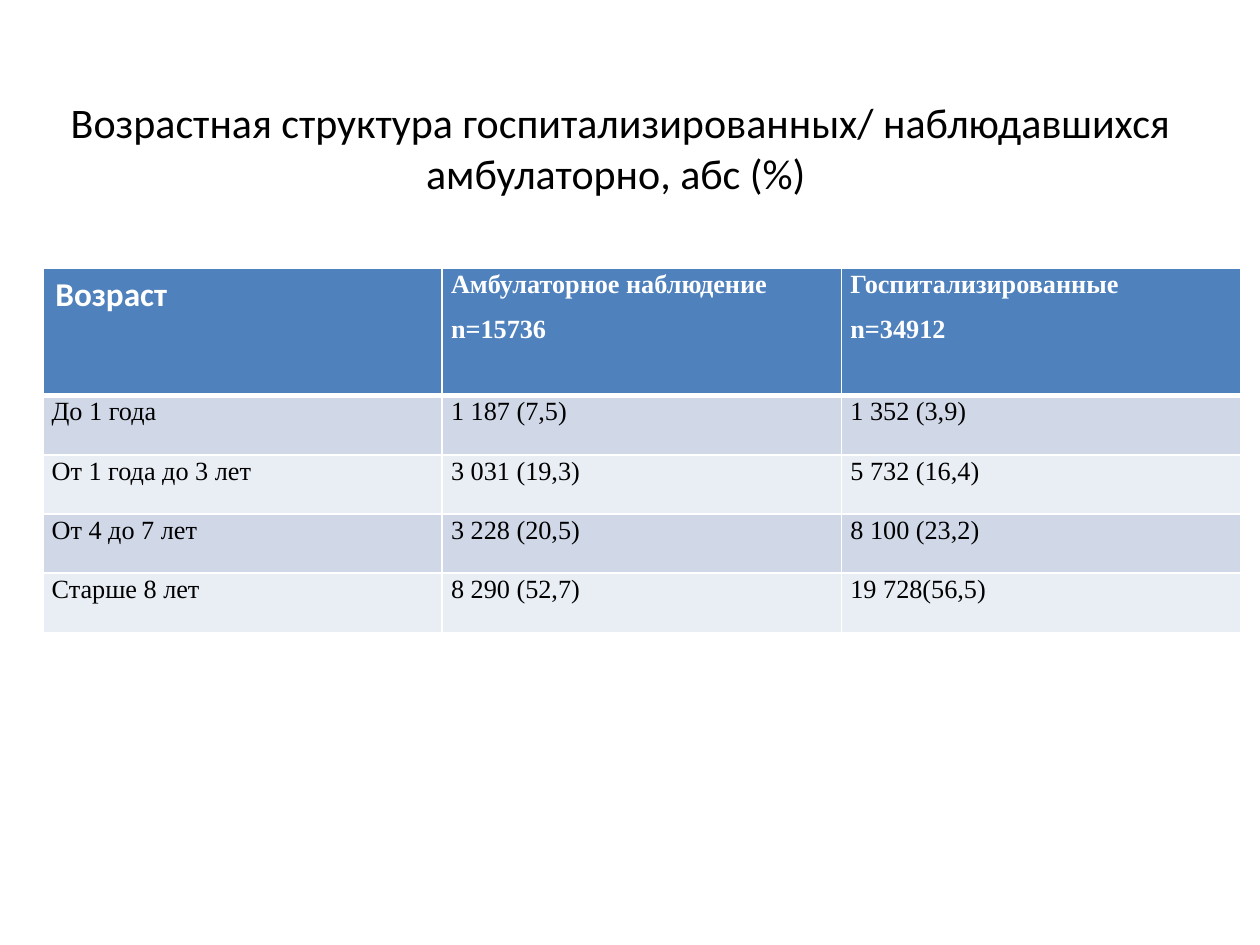
from dataclasses import dataclass

from lxml.etree import SubElement
from pptx import Presentation
from pptx.dml.color import RGBColor as RGB
from pptx.enum.text import MSO_ANCHOR as ANCHOR, PP_ALIGN as ALIGN
from pptx.oxml.ns import qn
from pptx.util import Inches, Pt


@dataclass(frozen=True)
class Theme:
    ink: str = "000000"
    white: str = "FFFFFF"
    header: str = "4F81BD"
    bands: tuple = ("D0D8E8", "E9EDF4")
    heading_font: str = "Calibri"
    body_font: str = "Times New Roman"
    title_size: int = 24
    corner_size: int = 19
    body_size: int = 15
    line: int = 1
    header_line: int = 3


class Deck:
    """Holds the theme and the current slide and draws each kind of element."""

    def __init__(self, theme, width=10, height=7.5):
        self.theme = theme
        self.prs = Presentation()
        self.prs.slide_width, self.prs.slide_height = Inches(width), Inches(height)
        self.s = self.prs.slides.add_slide(self.prs.slide_layouts[6])

    def box(self, x, y, w, h):
        sw, sh = self.prs.slide_width, self.prs.slide_height
        return int(x * sw), int(y * sh), int(w * sw), int(h * sh)

    def style(self, p, font, size, color, bold=False):
        p.font.name, p.font.size, p.font.bold = font, Pt(size), bold
        p.font.color.rgb = RGB.from_string(color)

    def title(self, text, *share):
        t = self.theme
        tf = self.s.shapes.add_textbox(*self.box(*share)).text_frame
        tf.word_wrap, tf.vertical_anchor = True, ANCHOR.MIDDLE
        p = tf.paragraphs[0]
        p.text, p.alignment = text, ALIGN.CENTER
        self.style(p, t.heading_font, t.title_size, t.ink)

    def borders(self, cell, bottom, top):
        t = self.theme
        pr = cell._tc.get_or_add_tcPr()
        widths = {"a:lnL": t.line, "a:lnR": t.line, "a:lnT": top, "a:lnB": bottom}
        for i, (tag, width) in enumerate(widths.items()):
            ln = SubElement(pr, qn(tag), w=str(Pt(width)))
            fill = SubElement(ln, qn("a:solidFill"))
            SubElement(fill, qn("a:srgbClr"), val=t.white)
            pr.insert(i, ln)

    def body_cell(self, cell, text, color, bold):
        t = self.theme
        cell.margin_left = cell.margin_right = Inches(0.07)
        cell.margin_top = cell.margin_bottom = 0
        cell.text = text
        for p in cell.text_frame.paragraphs:
            p.alignment, p.line_spacing, p.space_after = ALIGN.JUSTIFY, 1.07, Pt(8)
            self.style(p, t.body_font, t.body_size, color, bold)

    def corner_cell(self, cell, text):
        t = self.theme
        cell.text = text
        self.style(cell.text_frame.paragraphs[0], t.heading_font,
                   t.corner_size, t.white, True)

    def table(self, rows, x, y, w, row_shares):
        t = self.theme
        frame = self.box(x, y, w, sum(row_shares))
        table = self.s.shapes.add_table(len(rows), len(rows[0]), *frame).table
        for row, share in zip(table.rows, row_shares):
            row.height = int(share * self.prs.slide_height)
        for i, texts in enumerate(rows):
            head = i == 0
            fill = t.header if head else t.bands[(i - 1) % 2]
            for j, text in enumerate(texts):
                cell = table.cell(i, j)
                cell.fill.solid()
                cell.fill.fore_color.rgb = RGB.from_string(fill)
                self.borders(cell, t.header_line if head else t.line,
                             t.header_line if i == 1 else t.line)
                if head and j == 0:
                    self.corner_cell(cell, text)
                else:
                    self.body_cell(cell, text, t.white if head else t.ink, head)


ROWS = [
    ("Возраст", "Амбулаторное наблюдение\nn=15736", "Госпитализированные\nn=34912"),
    ("До 1 года", "1 187 (7,5)", "1 352 (3,9)"),
    ("От 1 года до 3 лет", "3 031 (19,3)", "5 732 (16,4)"),
    ("От 4 до 7 лет", "3 228 (20,5)", "8 100 (23,2)"),
    ("Старше 8 лет", "8 290 (52,7)", "19 728(56,5)"),
]


def main():
    deck = Deck(Theme())
    deck.title("Возрастная структура госпитализированных/ наблюдавшихся "
               "амбулаторно, абс (%) ", 0, 0.42 / 7.5, 0.985, 0.2)
    deck.table(ROWS, 0.034, 2.13 / 7.5, 0.951, [1.01 / 7.5] + [0.47 / 7.5] * 4)
    deck.prs.save("out.pptx")


if __name__ == "__main__":
    main()
